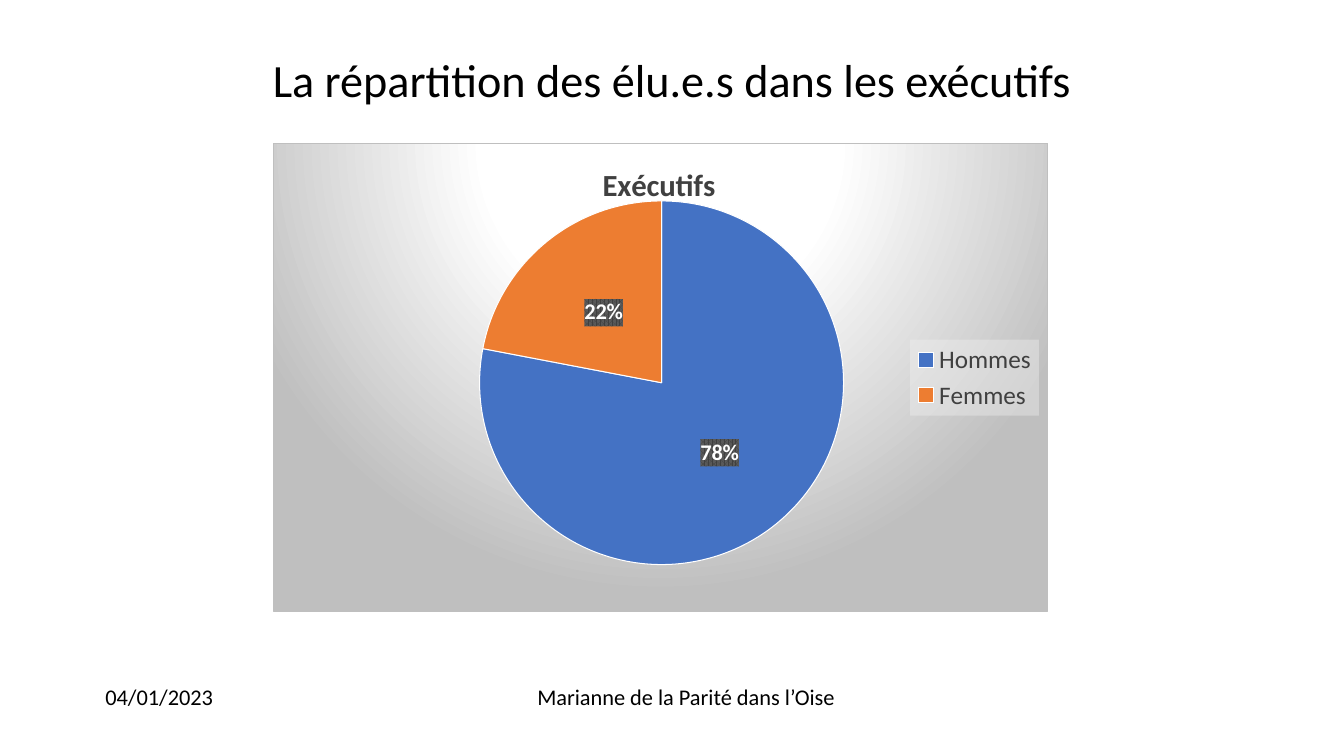
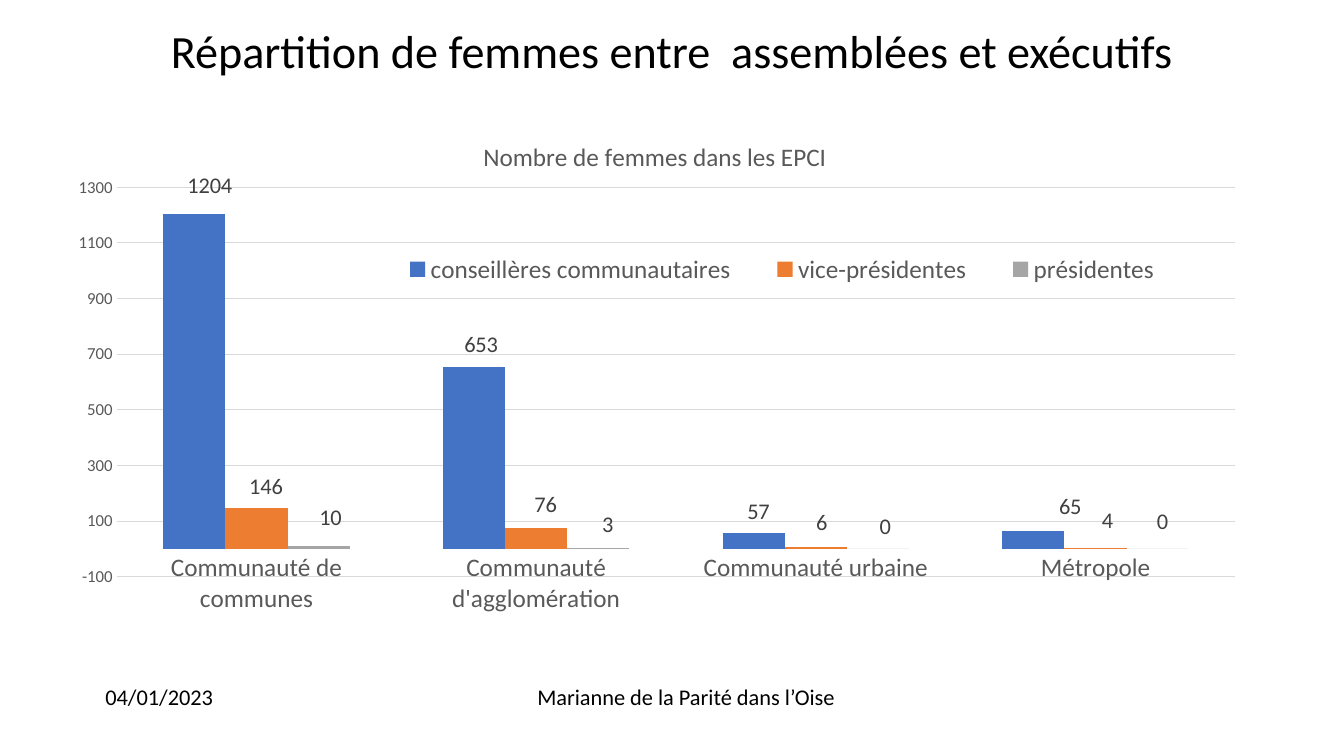
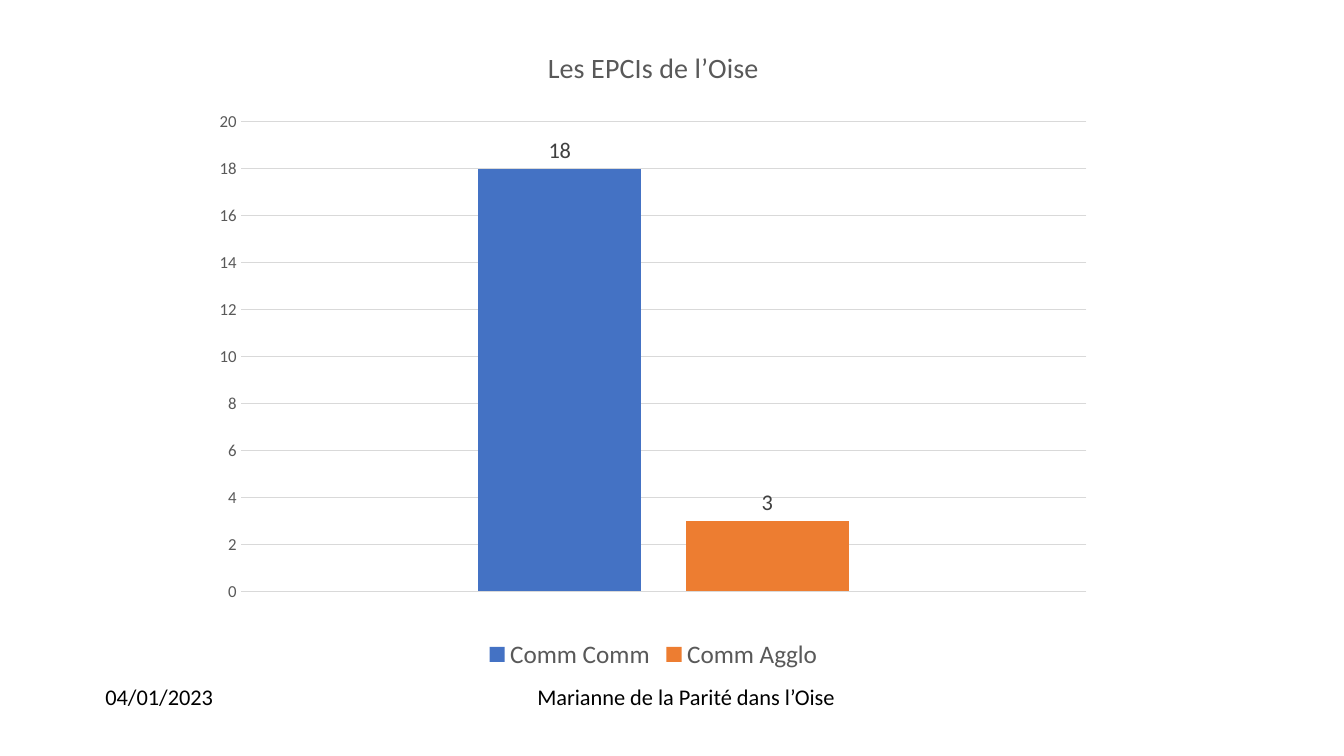
from pptx import Presentation
from pptx.chart.data import CategoryChartData
from pptx.dml.color import RGBColor
from pptx.enum.chart import XL_CHART_TYPE as CT, XL_LABEL_POSITION as LP
from pptx.enum.chart import XL_LEGEND_POSITION as LEG, XL_TICK_MARK as TICK
from pptx.enum.text import MSO_ANCHOR as ANCHOR, MSO_AUTO_SIZE as AUTO, PP_ALIGN as ALIGN
from pptx.oxml import parse_xml
from pptx.oxml.ns import nsdecls, qn
from pptx.util import Pt

FONT = "Calibri"
BLACK, WHITE, DARK, GREY, GRID = "000000", "FFFFFF", "404040", "595959", "D9D9D9"
COLORS = ["4472C4", "ED7D31", "A5A5A5"]
TITLE_ONLY, BLANK = 5, 6
rgb = RGBColor.from_string


def write(tf, text, size=16, color=BLACK, bold=False, spacing=None):
    """Put one centred, formatted paragraph in a text frame."""
    p = tf.paragraphs[0]
    p.alignment = ALIGN.CENTER
    if spacing:
        p.line_spacing = spacing
    r = p.add_run()
    r.text = text
    r.font.name, r.font.size, r.font.bold = FONT, Pt(size), bold
    r.font.color.rgb = rgb(color)


def place(parent, index, edge=True, inner=False, **values):
    """Give a chart part a manual layout, in percent of the chart."""
    for old in parent.findall(qn("c:layout")):
        parent.remove(old)
    xml = '<c:layoutTarget val="inner"/>' if inner else ""
    if edge:
        xml += '<c:xMode val="edge"/><c:yMode val="edge"/>'
    xml += "".join(f'<c:{k} val="{v / 100:.4f}"/>' for k, v in values.items())
    parent.insert(index, parse_xml(
        f'<c:layout {nsdecls("c")}><c:manualLayout>{xml}</c:manualLayout></c:layout>'))


SLIDES = [
    dict(title="La répartition des élu.e.s dans les exécutifs",
         title_box=(50.5, 29.5, 859, 51),
         kind=CT.PIE, box=(195, 102, 553.5, 335.5),
         cats=["Hommes", "Femmes"], series=[("Exécutifs", [78, 22])],
         heading=("Exécutifs", 22, DARK, True), heading_at=(41.8, 3.1),
         plot=(25.9, 12.3, 48.5, 77.6), legend=LEG.RIGHT),
    dict(title="Répartition de femmes entre  assemblées et exécutifs",
         title_box=(66, 15, 828, 44.5),
         kind=CT.COLUMN_CLUSTERED, box=(42.5, 85.5, 851, 368.5),
         cats=["Communauté de communes", "Communauté d'agglomération",
               "Communauté urbaine", "Métropole"],
         series=[("conseillères communautaires", [1204, 653, 57, 65]),
                 ("vice-présidentes", [146, 76, 6, 4]),
                 ("présidentes", [10, 3, 0, 0])],
         heading=("Nombre de femmes dans les EPCI", 18, GREY), heading_at=(35.2, 3),
         plot=(4.8, 13.1, 93.9, 75.5), legend=LEG.BOTTOM,
         legend_at=(26.2, 25.5, 68.9, 7),
         scale=(-100, 1300, 200), gap=150, overlap=0,
         label_shifts=[(1.3, -2), (0.6, -0.8), (0.4, -0.7), (3.1, -1.2),
                       (0.8, -0.7), (0.8, -1), (0.5, -1.3), (1, -1.8),
                       (1, -1.9), (0.8, -1), (0.6, -0.8), (0.4, -1.8)]),
    dict(kind=CT.COLUMN_CLUSTERED, box=(123, 20, 687.5, 462),
         cats=["1"], series=[("Comm Comm", [18]), ("Comm Agglo", [3])],
         heading=("Les EPCIs de l’Oise", 20, GREY), heading_at=(38.5, 2.3),
         plot=(7.1, 14.5, 87.9, 72.6), legend=LEG.BOTTOM,
         scale=(0, 20, 2), gap=291, overlap=-27, hide_categories=True),
]
FOOTERS = [("04/01/2023", 19.5, 188.5), ("Marianne de la Parité dans l’Oise", 327, 326)]

prs = Presentation()
prs.slide_width, prs.slide_height = Pt(960), Pt(540)

for number, d in enumerate(SLIDES):
    s = prs.slides.add_slide(prs.slide_layouts[TITLE_ONLY if "title" in d else BLANK])

    # The footers are made once and moved to the master
    if number == 0:
        for i, (text, left, width) in enumerate(FOOTERS):
            sp = s.shapes.add_textbox(Pt(left), Pt(484.5), Pt(width), Pt(27))
            sp.text_frame.word_wrap = True
            write(sp.text_frame, text)
            sp.element.xpath(".//p:cNvPr")[0].set("id", str(100 + i))
            prs.slide_master.shapes.element.append(sp.element)

    if "title" in d:
        sp = s.shapes.title
        sp.left, sp.top, sp.width, sp.height = map(Pt, d["title_box"])
        tf = sp.text_frame
        tf.auto_size, tf.vertical_anchor = AUTO.NONE, ANCHOR.BOTTOM
        write(tf, d["title"], size=33, spacing=0.9)

    data = CategoryChartData()
    data.categories = d["cats"]
    for name, values in d["series"]:
        data.add_series(name, values)
    chart = s.shapes.add_chart(d["kind"], *map(Pt, d["box"]), data).chart
    chart.font.name, chart.font.size = FONT, Pt(10)
    chart.font.color.rgb = rgb(BLACK)
    root = chart.element
    is_pie = d["kind"] == CT.PIE

    chart.has_title = True
    write(chart.chart_title.text_frame, *d["heading"])
    x, y = d["heading_at"]
    place(root.xpath("./c:chart/c:title")[0], 1, x=x, y=y)
    x, y, w, h = d["plot"]
    place(root.xpath(".//c:plotArea")[0], 0, inner=True, x=x, y=y, w=w, h=h)

    chart.has_legend = True
    legend = chart.legend
    legend.position, legend.include_in_layout = d["legend"], False
    legend_color = DARK if is_pie else GREY
    fonts = [(legend.font, 18, legend_color, False)]
    if "legend_at" in d:
        x, y, w, h = d["legend_at"]
        place(root.xpath(".//c:legend")[0], 1, x=x, y=y, w=w, h=h)

    plot = chart.plots[0]
    if is_pie:
        ser = plot.series[0]
        for i in range(len(d["cats"])):
            fmt = ser.points[i].format
            fmt.fill.solid()
            fmt.fill.fore_color.rgb = rgb(COLORS[i])
            fmt.line.color.rgb = rgb(WHITE)
            fmt.line.width = Pt(0.75)
        labels = ser.data_labels
        labels.show_percentage, labels.show_value = True, False
        labels.number_format, labels.number_format_is_linked = "0%", False
        labels.position = LP.CENTER
        fonts.append((labels.font, 16, WHITE, True))
    else:
        plot.vary_by_categories = False
        plot.gap_width, plot.overlap = d["gap"], d["overlap"]
        for ser, color in zip(plot.series, COLORS):
            ser.format.fill.solid()
            ser.format.fill.fore_color.rgb = rgb(color)
            labels = ser.data_labels
            labels.show_value, labels.position = True, LP.OUTSIDE_END
            fonts.append((labels.font, 16, DARK, False))
            if "label_shifts" in d:
                for i in range(len(d["cats"])):
                    label = ser.points[i].data_label
                    label.position = LP.OUTSIDE_END
                    fonts.append((label.font, 16, DARK, False))

        cat_axis, val_axis = chart.category_axis, chart.value_axis
        for axis, size in ((cat_axis, 18), (val_axis, 12)):
            axis.major_tick_mark = axis.minor_tick_mark = TICK.NONE
            axis.format.line.fill.background()
            fonts.append((axis.tick_labels.font, size, GREY, False))
        cat_axis.visible = not d.get("hide_categories", False)
        val_axis.minimum_scale, val_axis.maximum_scale, val_axis.major_unit = d["scale"]
        grid = val_axis.major_gridlines.format.line
        grid.color.rgb, grid.width = rgb(GRID), Pt(0.75)

    for font, size, color, bold in fonts:
        font.name, font.size, font.bold = FONT, Pt(size), bold
        font.color.rgb = rgb(color)

    for label, (dx, dy) in zip(root.xpath(".//c:dLbl"), d.get("label_shifts", [])):
        place(label, 1, edge=False, x=dx, y=dy)
    for leader_lines in root.xpath(".//c:showLeaderLines"):
        leader_lines.set("val", "0")

    # Gradient, translucent and pattern backgrounds of the pie chart
    if is_pie:
        stops = "".join(f'<a:gs pos="{pos}"><a:srgbClr val="{c}"/></a:gs>'
                        for pos, c in ((0, WHITE), (39000, WHITE), (100000, "BFBFBF")))
        backgrounds = [
            (root, f'<a:gradFill><a:gsLst>{stops}</a:gsLst><a:path path="circle">'
                   '<a:fillToRect l="50000" t="-80000" r="50000" b="180000"/></a:path>'
                   '</a:gradFill><a:ln w="9525"><a:solidFill><a:srgbClr val="BFBFBF"/>'
                   '</a:solidFill></a:ln>'),
            (root.xpath(".//c:legend")[0],
             '<a:solidFill><a:srgbClr val="F2F2F2"><a:alpha val="39000"/></a:srgbClr>'
             '</a:solidFill>'),
            (root.xpath(".//c:ser/c:dLbls")[0],
             f'<a:pattFill prst="pct75"><a:fgClr><a:srgbClr val="{DARK}"/></a:fgClr>'
             f'<a:bgClr><a:srgbClr val="{GREY}"/></a:bgClr></a:pattFill>'),
        ]
        for parent, fill in backgrounds:
            parent.find(qn("c:txPr")).addprevious(
                parse_xml(f'<c:spPr {nsdecls("c", "a")}>{fill}</c:spPr>'))

prs.save("out.pptx")
